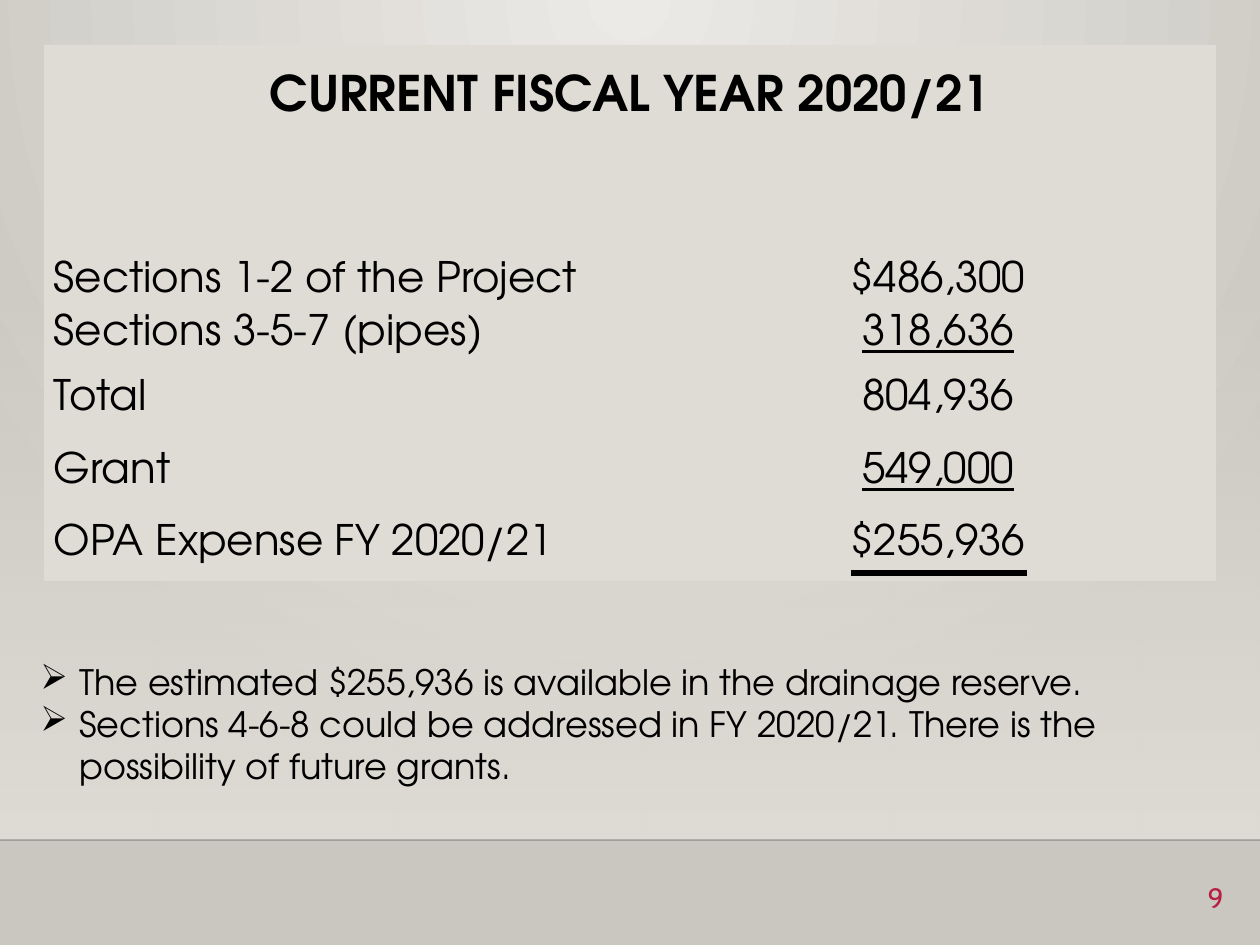
from lxml.etree import SubElement
from pptx import Presentation
from pptx.dml.color import RGBColor
from pptx.enum.shapes import MSO_CONNECTOR, MSO_SHAPE
from pptx.enum.text import MSO_ANCHOR, PP_ALIGN
from pptx.oxml.ns import qn
from pptx.util import Pt

BLACK = RGBColor(0x00, 0x00, 0x00)
CRIMSON = RGBColor(0xB7, 0x1E, 0x42)
PANEL = RGBColor(0xDF, 0xDB, 0xD5)
GLOW = RGBColor(0xEC, 0xEA, 0xE7)
STONE = RGBColor(0xCA, 0xC7, 0xC1)
BODY_FONT = "TeX Gyre Adventor"
NUMBER_FONT = "Cabin"
NO_GRID_STYLE = "{2D5ABB26-0587-4C30-8999-92F81FD0307C}"
SCALE = 914400 / 126


def px(*lengths):
    return [round(length * SCALE) for length in lengths]


def add_run(paragraph, text, size, font=BODY_FONT, color=BLACK):
    run = paragraph.add_run()
    run.text = text
    run.font.size = Pt(size)
    run.font.name = font
    run.font.color.rgb = color
    return run


presentation = Presentation()
presentation.slide_width, presentation.slide_height = px(1260, 945)
slide = presentation.slides.add_slide(presentation.slide_layouts[6])
shapes = slide.shapes

# Background: glow spreading from the top centre
background = slide.background.fill
background.gradient()
for stop, color in zip(background.gradient_stops, (GLOW, STONE)):
    stop.color.rgb = color
gradient = slide.element.find(".//" + qn("a:gradFill"))
gradient.remove(gradient.find(qn("a:lin")))
glow_shape = SubElement(gradient, qn("a:path"), path="circle")
SubElement(glow_shape, qn("a:fillToRect"), l="43000", t="0", r="43000", b="100000")

# Haze that fades in down to the floor line
haze = shapes.add_shape(MSO_SHAPE.RECTANGLE, *px(0, 277, 1260, 563))
haze.shadow.inherit = False
haze.line.fill.background()
haze.fill.gradient()
haze.fill.gradient_angle = 270
for stop in haze.fill.gradient_stops:
    stop.color.rgb = PANEL
first_color = haze.element.find(".//" + qn("a:srgbClr"))
SubElement(first_color, qn("a:alpha"), val="0")

# Title panel
title = shapes.add_shape(MSO_SHAPE.RECTANGLE, *px(44, 45, 1172, 123))
title.shadow.inherit = False
title.fill.solid()
title.fill.fore_color.rgb = PANEL
title.line.fill.background()
title.text_frame.vertical_anchor = MSO_ANCHOR.TOP
paragraph = title.text_frame.paragraphs[0]
paragraph.alignment = PP_ALIGN.CENTER
paragraph.line_spacing = 1.2
add_run(paragraph, "CURRENT FISCAL YEAR 2020/21", 28).font.bold = True

# Cost table: label, amount, underlined, row height
rows = [
    ("Sections 1-2 of the Project", "$486,300", False, 137),
    ("Sections 3-5-7 (pipes)", "318,636", True, 57),
    ("Total", "804,936", False, 73),
    ("Grant", "549,000", True, 73),
    ("OPA Expense FY 2020/21", "$255,936", False, 73),
]
table_frame = shapes.add_table(len(rows), 2, *px(44, 168, 1172, 413))
table = table_frame.table
table.first_row = False
table.horz_banding = False
table_frame.element.find(".//" + qn("a:tableStyleId")).text = NO_GRID_STYLE
table.columns[0].width, table.columns[1].width = px(616, 556)
for row_index, (label, amount, underlined, height) in enumerate(rows):
    table.rows[row_index].height = px(height)[0]
    for column_index, text in enumerate((label, amount)):
        cell = table.cell(row_index, column_index)
        cell.fill.solid()
        cell.fill.fore_color.rgb = PANEL
        cell.margin_left, cell.margin_right = px(10, 10)
        cell.margin_top, cell.margin_bottom = px(5, 5)
        cell.vertical_anchor = MSO_ANCHOR.MIDDLE if row_index else MSO_ANCHOR.BOTTOM
        paragraph = cell.text_frame.paragraphs[0]
        run = add_run(paragraph, text, 24)
        if column_index == 1:
            paragraph.alignment = PP_ALIGN.CENTER
            run.font.underline = underlined

# Floor line and the rule under the final amount: ends, color, width, opacity
rules = [
    ((0, 840, 1260, 840), BLACK, 1, 20),
    ((851, 573, 1027, 573), BLACK, 3, 100),
]
for ends, color, width, opacity in rules:
    rule = shapes.add_connector(MSO_CONNECTOR.STRAIGHT, *px(*ends))
    rule.line.color.rgb = color
    rule.line.width = Pt(width)
    line_color = rule.element.find(".//" + qn("a:srgbClr"))
    SubElement(line_color, qn("a:alpha"), val=str(opacity * 1000))
    SubElement(rule.element.spPr, qn("a:effectLst"))

# Notes with arrow bullets
notes = [
    "The estimated $255,936 is available in the drainage reserve.",
    "Sections 4-6-8 could be addressed in FY 2020/21. There is the possibility of future grants.",
]
notes_frame = shapes.add_textbox(*px(28, 654, 1188, 140)).text_frame
notes_frame.word_wrap = True
indent = px(39)[0]
for index, note in enumerate(notes):
    paragraph = notes_frame.add_paragraph() if index else notes_frame.paragraphs[0]
    properties = paragraph._p.get_or_add_pPr()
    properties.set("marL", str(indent))
    properties.set("indent", str(-indent))
    SubElement(properties, qn("a:buChar"), char="➢")
    add_run(paragraph, note, 20)

# Slide number
number_frame = shapes.add_textbox(*px(1152, 878, 84, 55)).text_frame
number_frame.word_wrap = True
paragraph = number_frame.paragraphs[0]
paragraph.alignment = PP_ALIGN.RIGHT
paragraph.line_spacing = 0.9
add_run(paragraph, "9", 16, NUMBER_FONT, CRIMSON)

presentation.save("out.pptx")
